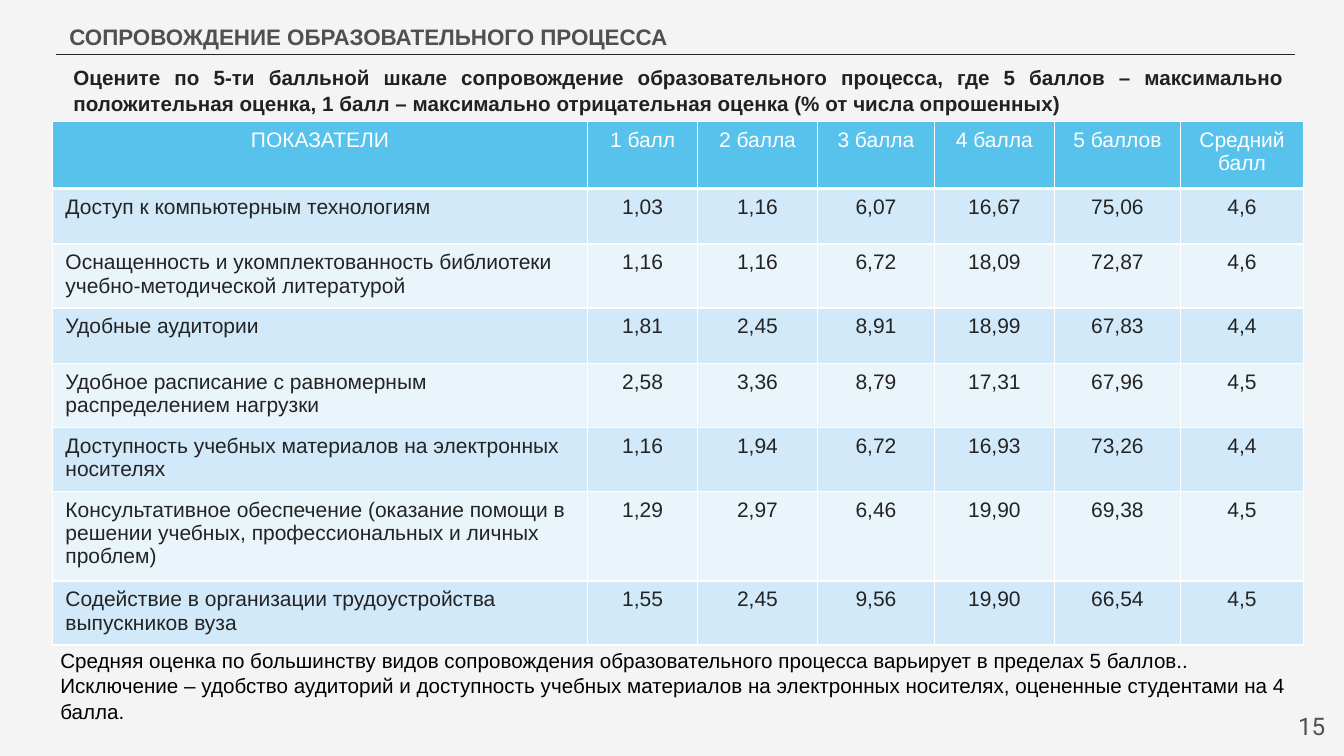
from dataclasses import dataclass

from lxml.etree import SubElement
from pptx import Presentation
from pptx.dml.color import RGBColor
from pptx.enum.shapes import MSO_CONNECTOR as Connector
from pptx.enum.text import MSO_ANCHOR as Anchor, PP_ALIGN as Align
from pptx.oxml.ns import qn
from pptx.util import Cm, Pt


@dataclass(frozen=True)
class Theme:
    font: str = "Arial"
    number_font: str = "Roboto"
    background: str = "F4F4F4"
    heading: str = "505050"
    question: str = "212121"
    ink: str = "242424"
    note: str = "000000"
    white: str = "FFFFFF"
    header_fill: str = "57C2EC"
    band_fills: tuple[str, str] = ("D1E9F8", "EAF4FB")
    title_size: float = 16
    text_size: float = 14.7
    table_size: float = 15
    number_size: float = 17.3


@dataclass(frozen=True)
class Box:
    left: float
    top: float
    width: float
    height: float

    def lengths(self) -> tuple:
        return Cm(self.left), Cm(self.top), Cm(self.width), Cm(self.height)


@dataclass(frozen=True)
class Style:
    size: float
    color: str
    bold: bool = False
    align: Align = Align.LEFT
    font: str = "Arial"
    spacing: float = 1.0


@dataclass(frozen=True)
class Rating:
    indicator: str
    scores: str
    height: float


THEME = Theme()
HEADER = Rating("ПОКАЗАТЕЛИ", "1 балл|2 балла|3 балла|4 балла|5 баллов|Средний балл", 1.68)
RATINGS = [
    Rating("Доступ к компьютерным технологиям", "1,03|1,16|6,07|16,67|75,06|4,6", 1.4),
    Rating("Оснащенность и укомплектованность библиотеки учебно-методической литературой",
           "1,16|1,16|6,72|18,09|72,87|4,6", 1.61),
    Rating("Удобные аудитории", "1,81|2,45|8,91|18,99|67,83|4,4", 1.4),
    Rating("Удобное расписание с равномерным распределением нагрузки",
           "2,58|3,36|8,79|17,31|67,96|4,5", 1.61),
    Rating("Доступность учебных материалов на электронных носителях",
           "1,16|1,94|6,72|16,93|73,26|4,4", 1.61),
    Rating("Консультативное обеспечение (оказание помощи в решении учебных, "
           "профессиональных и личных проблем)", "1,29|2,97|6,46|19,90|69,38|4,5", 2.26),
    Rating("Содействие в организации трудоустройства выпускников вуза",
           "1,55|2,45|9,56|19,90|66,54|4,5", 1.61),
]
COLUMN_WIDTHS = [13.49, 2.77, 3.02, 2.95, 3.02, 3.18, 3.1]


def write(frame, text: str, style: Style) -> None:
    paragraph = frame.paragraphs[0]
    paragraph.alignment = style.align
    paragraph.line_spacing = style.spacing
    run = paragraph.add_run()
    run.text = text
    run.font.name = style.font
    run.font.size = Pt(style.size)
    run.font.bold = style.bold
    run.font.color.rgb = RGBColor.from_string(style.color)


def set_insets(target, horizontal: float, vertical: float) -> None:
    target.margin_left = target.margin_right = Cm(horizontal)
    target.margin_top = target.margin_bottom = Cm(vertical)


def add_text(slide, box: Box, text: str, style: Style, insets: tuple[float, float]) -> None:
    frame = slide.shapes.add_textbox(*box.lengths()).text_frame
    frame.word_wrap = True
    set_insets(frame, *insets)
    write(frame, text, style)


def add_title(slide, box: Box, text: str, style: Style) -> None:
    title = slide.shapes.title
    title.left, title.top, title.width, title.height = box.lengths()
    frame = title.text_frame
    frame.vertical_anchor = Anchor.TOP
    set_insets(frame, 0.48, 0.33)
    write(frame, text, style)


def add_rule(slide, left: float, right: float, y: float) -> None:
    rule = slide.shapes.add_connector(Connector.STRAIGHT, Cm(left), Cm(y), Cm(right), Cm(y))
    rule.line.color.rgb = RGBColor.from_string(THEME.ink)
    rule.line.width = Pt(0.75)
    SubElement(rule.element.spPr, qn("a:effectLst"))


def add_borders(cell, bottom_width: float) -> None:
    properties = cell._tc.get_or_add_tcPr()
    for side, width in (("L", 1), ("R", 1), ("T", 1), ("B", bottom_width)):
        border = SubElement(properties, qn(f"a:ln{side}"), w=str(Pt(width)))
        fill = SubElement(border, qn("a:solidFill"))
        SubElement(fill, qn("a:srgbClr"), val=THEME.white)


def add_ratings(slide, left: float, top: float) -> None:
    rows = [HEADER, *RATINGS]
    box = Box(left, top, sum(COLUMN_WIDTHS), sum(row.height for row in rows))
    table = slide.shapes.add_table(len(rows), len(COLUMN_WIDTHS), *box.lengths()).table
    for column, width in zip(table.columns, COLUMN_WIDTHS):
        column.width = Cm(width)
    for r, rating in enumerate(rows):
        is_header = r == 0
        table.rows[r].height = Cm(rating.height)
        fill = THEME.header_fill if is_header else THEME.band_fills[(r - 1) % 2]
        color = THEME.white if is_header else THEME.ink
        for c, text in enumerate([rating.indicator, *rating.scores.split("|")]):
            cell = table.cell(r, c)
            set_insets(cell, 0.33, 0.17)
            add_borders(cell, 3 if is_header else 1)
            cell.fill.solid()
            cell.fill.fore_color.rgb = RGBColor.from_string(fill)
            align = Align.CENTER if is_header or c else Align.LEFT
            write(cell.text_frame, text, Style(THEME.table_size, color, align=align))


def main() -> None:
    deck = Presentation()
    deck.slide_width, deck.slide_height = Cm(33.87), Cm(19.05)
    slide = deck.slides.add_slide(deck.slide_layouts[5])
    slide.background.fill.solid()
    slide.background.fill.fore_color.rgb = RGBColor.from_string(THEME.background)

    # Heading and rule
    add_rule(slide, 1.4, 32.64, 1.37)
    add_title(slide, Box(1.27, 0.25, 21.46, 1.37), "СОПРОВОЖДЕНИЕ ОБРАЗОВАТЕЛЬНОГО ПРОЦЕССА",
              Style(THEME.title_size, THEME.heading, bold=True))

    # Survey question
    add_text(slide, Box(1.6, 1.5, 30.99, 1.5),
             "Оцените по 5-ти балльной шкале сопровождение образовательного процесса, "
             "где 5 баллов – максимально положительная оценка, 1 балл – максимально "
             "отрицательная оценка (% от числа опрошенных)",
             Style(THEME.text_size, THEME.question, bold=True, align=Align.JUSTIFY, spacing=1.03),
             (0.25, 0.13))

    # Ratings table
    add_ratings(slide, 1.32, 3.07)

    # Conclusion
    add_text(slide, Box(1.27, 16.18, 31.6, 2.13),
             "Средняя оценка по большинству видов сопровождения образовательного процесса "
             "варьирует в пределах 5 баллов.. Исключение – удобство аудиторий и доступность "
             "учебных материалов на электронных носителях, оцененные студентами на 4 балла.",
             Style(THEME.text_size, THEME.note, spacing=1.03), (0.25, 0.13))

    # Page number
    add_text(slide, Box(31.7, 17.6, 2.03, 1.45), "15",
             Style(THEME.number_size, THEME.heading, align=Align.RIGHT, font=THEME.number_font),
             (0.33, 0.33))

    deck.save("out.pptx")


if __name__ == "__main__":
    main()
